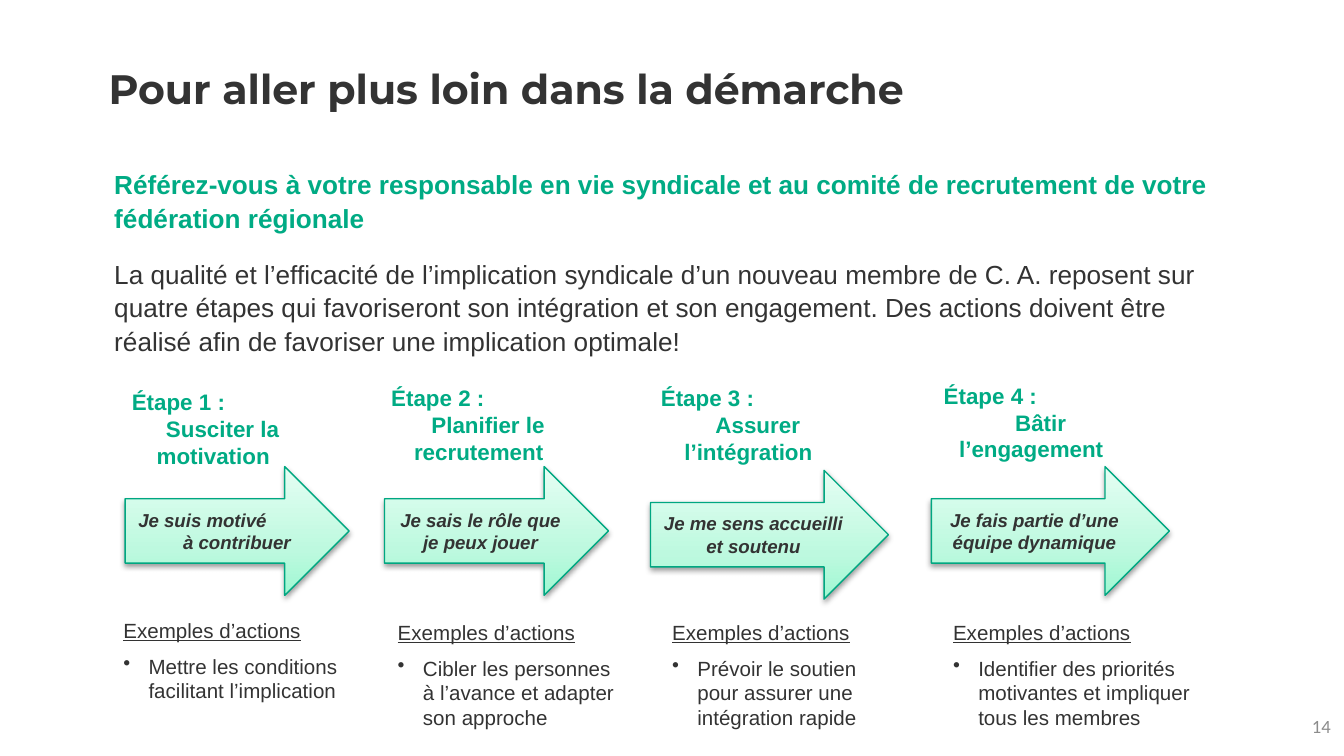
from pptx import Presentation
from pptx.dml.color import RGBColor
from pptx.enum.shapes import MSO_SHAPE
from pptx.enum.text import MSO_ANCHOR, MSO_AUTO_SIZE, PP_ALIGN
from pptx.oxml import parse_xml
from pptx.oxml.ns import nsdecls
from pptx.util import Pt

LEFT, MID, RIGHT = PP_ALIGN.LEFT, PP_ALIGN.CENTER, PP_ALIGN.RIGHT
CENTER = MSO_ANCHOR.MIDDLE
TOP = MSO_ANCHOR.TOP
FIXED = MSO_AUTO_SIZE.NONE
ARROW = MSO_SHAPE.RIGHT_ARROW
GREEN, DARK, EDGE, GREY = "00AB84", "333333", "00A781", "8C8C8C"
STOPS = [(0, "9FF8D2"), (35, "BDF9DF"), (100, "E5FEF3")]

# Each step: label box, arrow box, list box (left, top, width), then the words
STEPS = [
    ((62, 204.5, 104.5), (67, 250, 120), (59, 327.5, 134),
     "Étape 1 :", "Susciter la motivation",
     ("Je suis motivé", "à contribuer"),
     "Mettre les conditions facilitant l’implication"),
    ((201, 202.5, 111), (206, 250, 120), (206, 328.5, 134),
     "Étape 2 :", "Planifier le recrutement",
     ("Je sais le rôle que je peux jouer",),
     "Cibler les personnes à l’avance et adapter son approche"),
    ((345.5, 202.5, 111), (348.5, 252, 127.5), (353, 328.5, 134),
     "Étape 3 :", "Assurer l’intégration",
     ("Je me sens accueilli et soutenu",),
     "Prévoir le soutien pour assurer une intégration rapide"),
    ((497, 201, 111), (499, 250, 127.5), (503.5, 328.5, 142.5),
     "Étape 4 :", "Bâtir l’engagement",
     ("Je fais partie d’une équipe dynamique",),
     "Identifier des priorités motivantes et impliquer tous les membres"),
]


def paint(code):
    return RGBColor.from_string(code)


def write(frame, text, size=14, color=DARK, font="Arial", bold=False,
          slant=False, under=False, align=LEFT, after=0, line=None,
          margin=0, first=0, bullet=None):
    """Add one formatted paragraph, filling the empty first one if any."""
    para = frame.paragraphs[0]
    if para.runs:
        para = frame.add_paragraph()
    para.alignment = align
    para.space_before = Pt(0)
    para.space_after = Pt(after)
    para.line_spacing = Pt(line) if line else 1.0
    props = para._p.get_or_add_pPr()
    props.set("marL", str(Pt(margin)))
    props.set("indent", str(Pt(first)))
    mark = f'<a:buChar {nsdecls("a")} char="{bullet}"/>'
    props.append(parse_xml(mark if bullet else f'<a:buNone {nsdecls("a")}/>'))
    run = para.add_run()
    run.text = text
    face = run.font
    face.name, face.size, face.color.rgb = font, Pt(size), paint(color)
    face.bold, face.italic, face.underline = bold, slant, under


def place(shape, left, top, width, height):
    shape.left, shape.top = Pt(left), Pt(top)
    shape.width, shape.height = Pt(width), Pt(height)


def add_box(slide, left, top, width, height, anchor=TOP):
    box = slide.shapes.add_textbox(Pt(left), Pt(top), Pt(width), Pt(height))
    frame = box.text_frame
    frame.word_wrap = True
    frame.vertical_anchor = anchor
    return frame


def add_label(slide, spot, name, goal):
    frame = add_box(slide, *spot, 51)
    style = dict(size=12, color=GREEN, bold=True)
    write(frame, name, first=1.5, **style)
    write(frame, goal, align=MID, first=10, **style)


def add_arrow(slide, spot, lines):
    left, top, width = spot
    shape = slide.shapes.add_shape(ARROW, Pt(left), Pt(top), Pt(width), Pt(69))
    shape.line.color.rgb = paint(EDGE)
    shape.line.width = Pt(0.75)
    # Gradient before the outline, soft shadow after it
    stops = "".join(f'<a:gs pos="{pos * 1000}"><a:srgbClr val="{code}"/></a:gs>'
                    for pos, code in STOPS)
    props = shape.element.spPr
    props.insert(2, parse_xml(
        f'<a:gradFill {nsdecls("a")} rotWithShape="1"><a:gsLst>{stops}</a:gsLst>'
        '<a:lin ang="16200000" scaled="0"/></a:gradFill>'))
    props.append(parse_xml(
        f'<a:effectLst {nsdecls("a")}><a:outerShdw blurRad="{Pt(3.1)}" '
        f'dist="{Pt(1.6)}" dir="5400000" rotWithShape="0">'
        '<a:srgbClr val="000000"><a:alpha val="38000"/></a:srgbClr>'
        '</a:outerShdw></a:effectLst>'))
    frame = shape.text_frame
    frame.word_wrap = True
    frame.vertical_anchor = CENTER
    style = dict(size=10, bold=True, slant=True)
    if len(lines) == 1:
        write(frame, lines[0], align=MID, **style)
    else:
        write(frame, lines[0], **style)
        write(frame, lines[1], align=MID, first=17, **style)


def add_list(slide, spot, item):
    frame = add_box(slide, *spot, 80)
    write(frame, "Exemples d’actions", size=11, under=True, after=6)
    write(frame, item, size=11, margin=13.5, first=-13.5, bullet="•")


def main():
    deck = Presentation()
    deck.slide_width, deck.slide_height = Pt(720), Pt(405)
    slide = deck.slides.add_slide(deck.slide_layouts[1])

    # Title
    title = slide.shapes.title
    place(title, 51, 35.5, 630, 25)
    frame = title.text_frame
    frame.auto_size, frame.vertical_anchor = FIXED, CENTER
    frame.margin_top = frame.margin_bottom = 0
    write(frame, "Pour aller plus loin dans la démarche", size=22,
          font="Montserrat", bold=True, line=25)

    # Introduction
    body = slide.placeholders[1]
    place(body, 54, 85.5, 603, 276)
    frame = body.text_frame
    frame.auto_size, frame.vertical_anchor = FIXED, TOP
    write(frame, "Référez-vous à votre responsable en vie syndicale et au comité "
          "de recrutement de votre fédération régionale",
          color=GREEN, bold=True, line=18, after=12)
    write(frame, "La qualité et l’efficacité de l’implication syndicale d’un "
          "nouveau membre de C. A. reposent sur quatre étapes qui favoriseront "
          "son intégration et son engagement. Des actions doivent être réalisé "
          "afin de favoriser une implication optimale!", line=18)

    # Four steps
    for label, arrow, spot, name, goal, lines, item in STEPS:
        add_arrow(slide, arrow, lines)
        add_label(slide, label, name, goal)
        add_list(slide, spot, item)

    # Page number
    frame = add_box(slide, 656.5, 378, 63.5, 21.5, CENTER)
    write(frame, "14", size=10, color=GREY, font="Calibri", align=RIGHT)

    deck.save("out.pptx")


if __name__ == "__main__":
    main()
